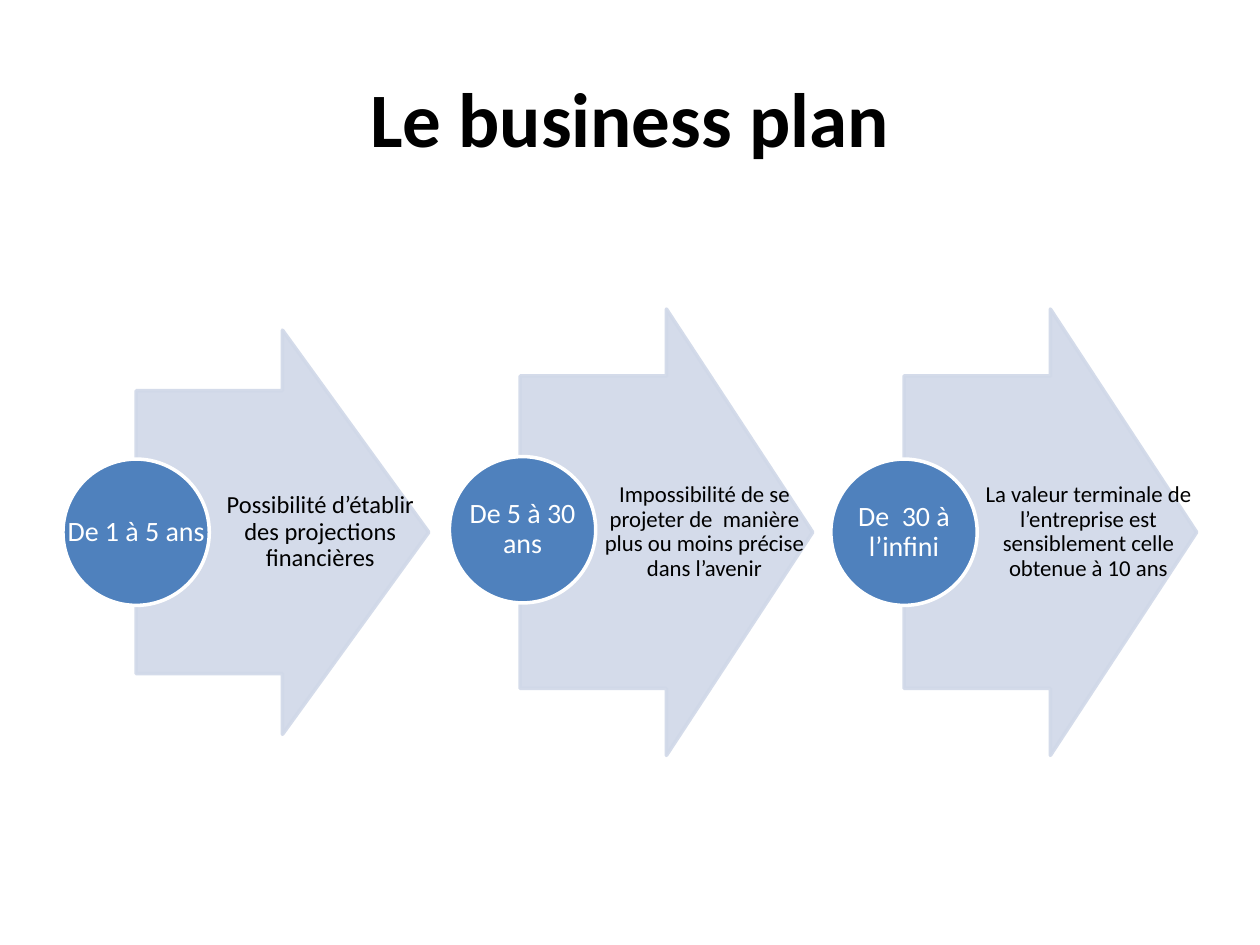
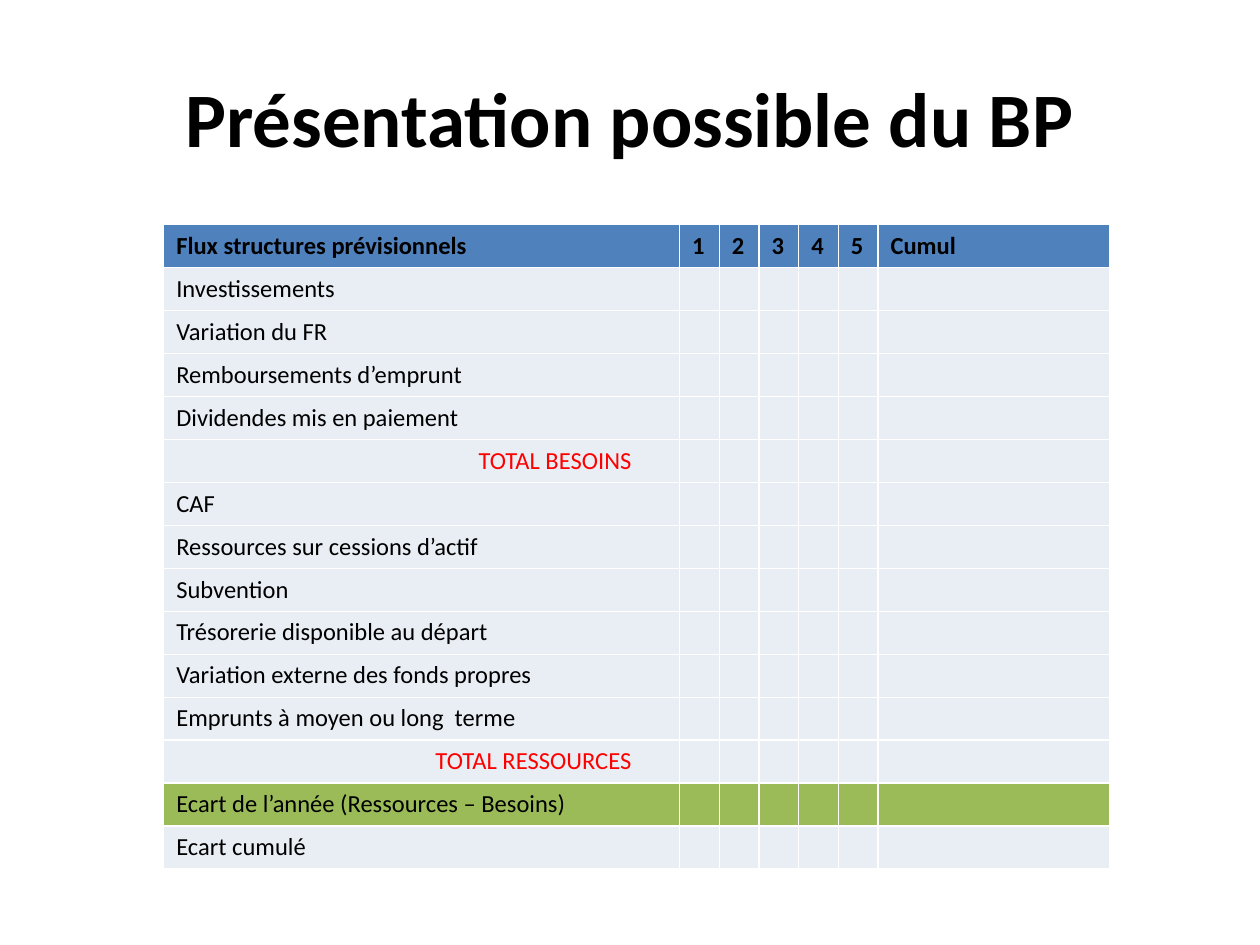
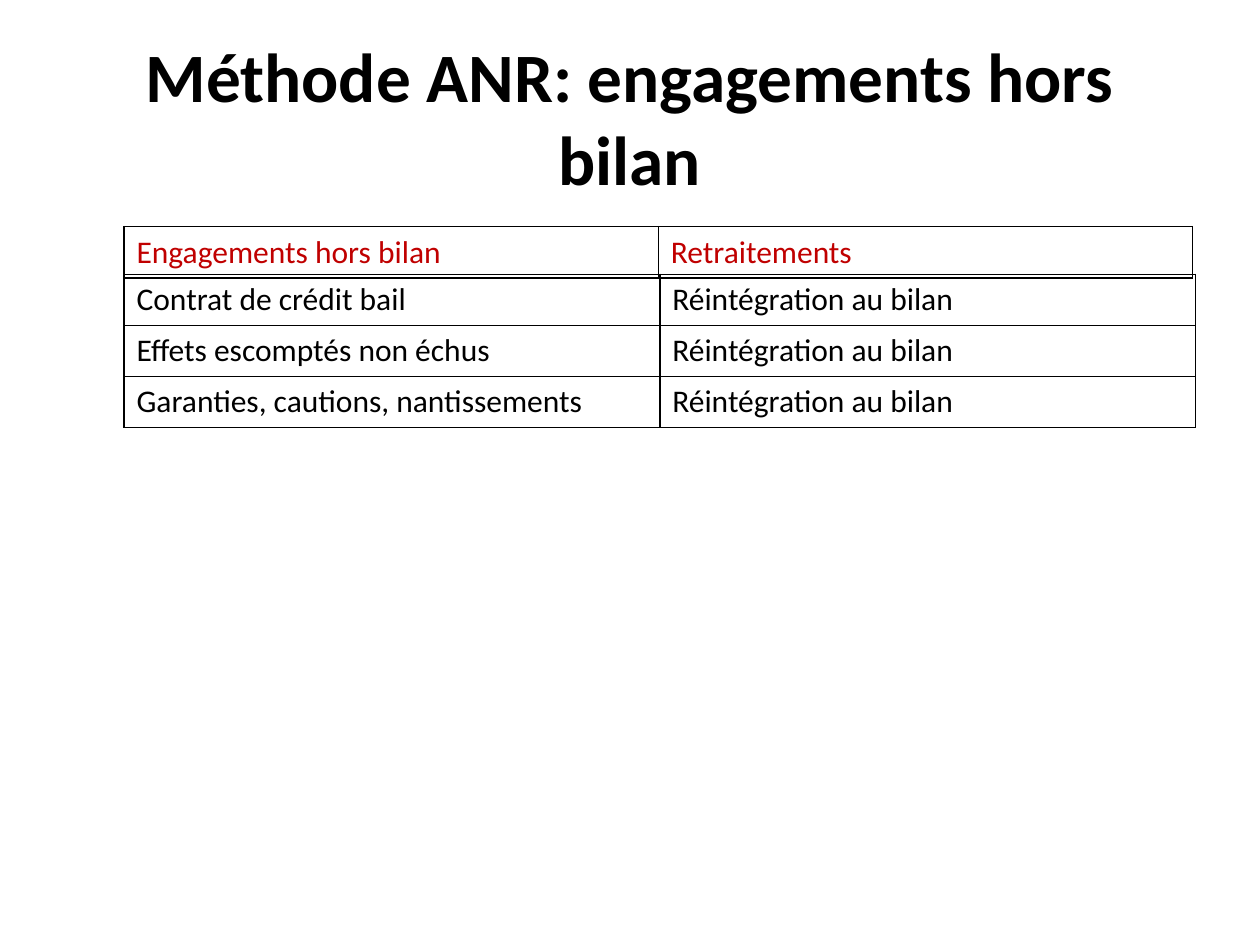
from lxml.etree import SubElement
from pptx import Presentation
from pptx.dml.color import RGBColor
from pptx.enum.shapes import MSO_SHAPE
from pptx.enum.text import MSO_ANCHOR, MSO_AUTO_SIZE, PP_ALIGN
from pptx.oxml.ns import qn
from pptx.util import Cm, Pt

FONT = "Calibri"
BLACK = "000000"
WHITE = "FFFFFF"
BLUE = "4F81BD"
ARROW_BLUE = "D0D8E8"
ROW_GREY = "E9EDF4"
GREEN = "9BBB59"
TOTAL_RED = "FF0000"
HEADING_RED = "C00000"

PERIODS = [
    ("De 1 à 5 ans", "Possibilité d’établir des projections financières", 14, 8.15, 0),
    ("De 5 à 30 ans", "Impossibilité de se projeter de  manière plus ou moins précise dans l’avenir", 13, 9, 0.05),
    ("De  30 à l’infini", "La valeur terminale de l’entreprise est sensiblement celle obtenue à 10 ans", 13, 9, 0),
]
FLOW_HEADER = ["Flux structures prévisionnels", "1", "2", "3", "4", "5", "Cumul"]
FLOW_LABELS = [
    "Investissements",
    "Variation du FR",
    "Remboursements d’emprunt",
    "Dividendes mis en paiement",
    "TOTAL BESOINS",
    "CAF",
    "Ressources sur cessions d’actif",
    "Subvention",
    "Trésorerie disponible au départ",
    "Variation externe des fonds propres",
    "Emprunts à moyen ou long  terme",
    "TOTAL RESSOURCES",
    "Ecart de l’année (Ressources – Besoins)",
    "Ecart cumulé",
]
COMMITMENTS = ["Contrat de crédit bail", "Effets escomptés non échus", "Garanties, cautions, nantissements"]


def color(value):
    return RGBColor.from_string(value)


def format_text(text_frame, size, text_color, bold=False):
    for paragraph in text_frame.paragraphs:
        for run in paragraph.runs:
            run.font.name = FONT
            run.font.size = Pt(size)
            run.font.bold = bold
            run.font.color.rgb = color(text_color)


def add_titled_slide(presentation, title, size=44):
    slide = presentation.slides.add_slide(presentation.slide_layouts[5])
    shape = slide.shapes.title
    shape.left, shape.top, shape.width, shape.height = Cm(1.27), Cm(0.76), Cm(22.86), Cm(3.18)
    text_frame = shape.text_frame
    text_frame.text = title
    text_frame.auto_size = MSO_AUTO_SIZE.NONE
    text_frame.vertical_anchor = MSO_ANCHOR.MIDDLE
    text_frame.paragraphs[0].alignment = PP_ALIGN.CENTER
    format_text(text_frame, size, BLACK, bold=True)
    return slide


def add_preset(slide, preset, left, top, width, height, fill, line):
    shape = slide.shapes.add_shape(preset, Cm(left), Cm(top), Cm(width), Cm(height))
    shape.shadow.inherit = False
    shape.fill.solid()
    shape.fill.fore_color.rgb = color(fill)
    shape.line.color.rgb = color(line)
    shape.line.width = Pt(2)
    return shape


def add_label(slide, left, top, width, height, text, size, text_color, left_inset, right_inset):
    box = slide.shapes.add_textbox(Cm(left), Cm(top), Cm(width), Cm(height))
    text_frame = box.text_frame
    text_frame.text = text
    text_frame.word_wrap = True
    text_frame.vertical_anchor = MSO_ANCHOR.MIDDLE
    text_frame.margin_left, text_frame.margin_right = Cm(left_inset), Cm(right_inset)
    text_frame.margin_top = text_frame.margin_bottom = Cm(0.03)
    paragraph = text_frame.paragraphs[0]
    paragraph.alignment = PP_ALIGN.CENTER
    paragraph.line_spacing = 0.9
    format_text(text_frame, size, text_color)


def add_period(slide, left, middle, period):
    name, description, size, height, shift = period
    diameter, arrow_width = 2.95, 5.9
    arrow_left, arrow_top = left + diameter / 2, middle - height / 2
    arrow = add_preset(slide, MSO_SHAPE.RIGHT_ARROW, arrow_left, arrow_top, arrow_width, height,
                       ARROW_BLUE, ARROW_BLUE)
    arrow.adjustments[0], arrow.adjustments[1] = 0.7, 0.5
    for tint in arrow._element.spPr.iter(qn("a:srgbClr")):
        SubElement(tint, qn("a:alpha"), val="90000")
    add_label(slide, left + diameter, arrow_top, arrow_width - diameter / 2, height,
              description, size, BLACK, 0.1, 0.05)
    circle = (left + shift, middle - diameter / 2 - shift, diameter, diameter)
    add_preset(slide, MSO_SHAPE.OVAL, *circle, BLUE, WHITE)
    add_label(slide, *circle, name, 16, WHITE, 0.03, 0.03)


def add_borders(cell, border_color):
    properties = cell._tc.get_or_add_tcPr()
    for side in ("a:lnL", "a:lnR", "a:lnT", "a:lnB"):
        line = SubElement(properties, qn(side), w=str(Pt(1)))
        SubElement(SubElement(line, qn("a:solidFill")), qn("a:srgbClr"), val=border_color)


def fill_cell(cell, text, size, text_color, border_color, fill=None, bold=False):
    cell.text = text
    format_text(cell.text_frame, size, text_color, bold)
    if not text:
        SubElement(cell.text_frame.paragraphs[0]._p, qn("a:endParaRPr"), sz=str(size * 100))
    add_borders(cell, border_color)
    if fill:
        cell.fill.solid()
        cell.fill.fore_color.rgb = color(fill)
    else:
        cell.fill.background()


def add_plain_table(slide, left, top, column_widths, row_height, row_count):
    frame = slide.shapes.add_table(row_count, len(column_widths), Cm(left), Cm(top),
                                   Cm(sum(column_widths)), Cm(row_height * row_count))
    table = frame.table
    table.first_row = table.horz_banding = False
    for column, width in zip(table.columns, column_widths):
        column.width = Cm(width)
    for row in table.rows:
        row.height = Cm(row_height)
    return table


def add_flow_table(slide, left, top):
    widths = [10.4] + [0.8] * 5 + [4.68]
    rows = [FLOW_HEADER] + [[label] + [""] * 6 for label in FLOW_LABELS]
    table = add_plain_table(slide, left, top, widths, 13 / len(rows), len(rows))
    for row_index, values in enumerate(rows):
        header = row_index == 0
        total = values[0].startswith("TOTAL")
        fill = BLUE if header else GREEN if values[0].startswith("Ecart de") else ROW_GREY
        for column_index, text in enumerate(values):
            fill_cell(table.cell(row_index, column_index), text, 14,
                      TOTAL_RED if total else BLACK, WHITE, fill, header)
        if total:
            label = table.cell(row_index, 0)
            label.margin_right = Cm(0.97)
            label.text_frame.paragraphs[0].alignment = PP_ALIGN.RIGHT


def add_commitment_table(slide, left, top, column_width, row_height, rows, text_color):
    table = add_plain_table(slide, left, top, [column_width] * 2, row_height, len(rows))
    for row_index, values in enumerate(rows):
        for column_index, text in enumerate(values):
            fill_cell(table.cell(row_index, column_index), text, 18, text_color, BLACK)


def build_periods_slide(presentation):
    slide = add_titled_slide(presentation, "Le business plan")
    for index, period in enumerate(PERIODS):
        add_period(slide, 1.27 + 7.74 * index, 10.73, period)


def build_flow_slide(presentation):
    slide = add_titled_slide(presentation, "Présentation possible du BP")
    add_flow_table(slide, 3.3, 4.53)


def build_commitments_slide(presentation):
    slide = add_titled_slide(presentation, "Méthode ANR: engagements hors bilan", 39.6)
    rows = [(commitment, "Réintégration au bilan") for commitment in COMMITMENTS]
    add_commitment_table(slide, 2.5, 5.53, 10.8, 1.03, rows, BLACK)
    add_commitment_table(slide, 2.5, 4.57, 10.77, 1.02,
                         [("Engagements hors bilan", "Retraitements")], HEADING_RED)


def main():
    presentation = Presentation()
    presentation.slide_width, presentation.slide_height = Cm(25.4), Cm(19.05)
    build_periods_slide(presentation)
    build_flow_slide(presentation)
    build_commitments_slide(presentation)
    presentation.save("out.pptx")


if __name__ == "__main__":
    main()
